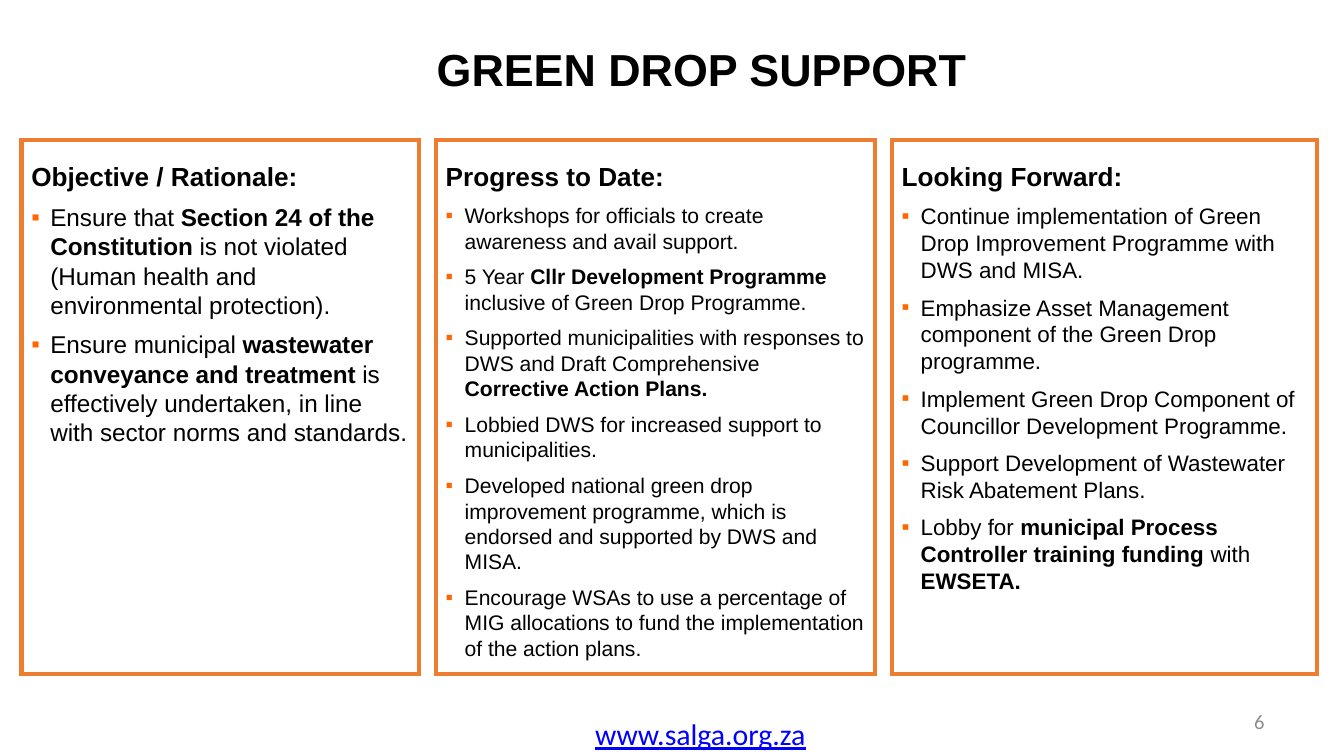
"""Build the Green Drop support slide with three outlined columns."""
from lxml import etree
from pptx import Presentation
from pptx.dml.color import RGBColor
from pptx.enum import shapes, text
from pptx.oxml import ns
from pptx.util import Pt


def paint(item, tone):
    item.solid()
    item.fore_color.rgb = RGBColor.from_string(tone)


def style(par, face, size, tone, align):
    par.alignment = align
    par.font.name = face
    par.font.size = Pt(size)
    paint(par.font.fill, tone)


left, mid, right = text.PP_ALIGN.LEFT, text.PP_ALIGN.CENTER, text.PP_ALIGN.RIGHT

deck = Presentation()
deck.slide_width, deck.slide_height = Pt(720), Pt(405)
slide = deck.slides.add_slide(deck.slide_layouts[5])

title = slide.shapes.title
title.left, title.top, title.width, title.height = Pt(118), Pt(15), Pt(515.5), Pt(43)
title.text_frame.text = "GREEN DROP SUPPORT"
title.text_frame.vertical_anchor = text.MSO_ANCHOR.MIDDLE
head = title.text_frame.paragraphs[0]
style(head, "Arial", 24, "000000", mid)
head.font.bold = True

columns = [
    (11.5, 213, 13, "Objective / Rationale:", [
        "Ensure that *Section 24 of the Constitution* is not violated "
        "(Human health and environmental protection).",
        "Ensure municipal *wastewater conveyance and treatment *is effectively "
        "undertaken, in line with sector norms and standards.",
    ]),
    (233.5, 235.5, 11.3, "Progress to Date:", [
        "Workshops for officials to create awareness and avail support.",
        "5 Year *Cllr Development Programme *inclusive of Green Drop Programme.",
        "Supported municipalities with responses to DWS and Draft Comprehensive "
        "*Corrective Action Plans.",
        "Lobbied DWS for increased support to municipalities.",
        "Developed national green drop improvement programme, which is endorsed "
        "and supported by DWS and MISA.",
        "Encourage WSAs to use a percentage of MIG allocations to fund the "
        "implementation of the action plans.",
    ]),
    (477.7, 228, 12, "Looking Forward:", [
        "Continue implementation of Green Drop Improvement Programme with DWS and MISA.",
        "Emphasize Asset Management component of the Green Drop programme.",
        "Implement Green Drop Component of Councillor Development Programme.",
        "Support Development of Wastewater Risk Abatement Plans.",
        "Lobby for *municipal Process Controller training funding* with *EWSETA.",
    ]),
]

for x, wide, size, name, points in columns:
    box = slide.shapes.add_shape(
        shapes.MSO_SHAPE.RECTANGLE, Pt(x), Pt(75), Pt(wide), Pt(286))
    box.shadow.inherit = False
    box.fill.background()
    paint(box.line.fill, "ED7D31")
    box.line.width = Pt(2.25)
    edge = box._element.spPr.find(ns.qn("a:ln"))
    etree.SubElement(edge, ns.qn("a:miter"), lim="800000")
    frame = box.text_frame
    frame.word_wrap = True
    frame.vertical_anchor = text.MSO_ANCHOR.TOP
    frame.margin_left = frame.margin_right = Pt(5.3)
    frame.margin_top = frame.margin_bottom = Pt(2.7)

    head = frame.paragraphs[0]
    head.text = name
    head.line_spacing = 1.5
    style(head, "Arial", 14, "000000", left)
    head.font.bold = True

    for point in points:
        par = frame.add_paragraph()
        props = par._p.get_or_add_pPr()
        props.set("marL", str(Pt(10.2)))
        props.set("indent", str(-Pt(10.2)))
        tint = etree.SubElement(props, ns.qn("a:buClr"))
        etree.SubElement(tint, ns.qn("a:srgbClr"), val="FF6600")
        etree.SubElement(props, ns.qn("a:buFont"), typeface="Arial")
        etree.SubElement(props, ns.qn("a:buChar"), char="▪")
        par.space_before = Pt(5.6)
        par.line_spacing = 1.0
        style(par, "Arial", size, "000000", left)
        for i, part in enumerate(point.split("*")):
            run = par.add_run()
            run.text = part
            run.font.bold = i % 2 == 1

notes = [
    ("www.salga.org.za", 294, 380, 162.5, 26, 16, "0000FF", mid, True),
    ("6", 516.5, 375.5, 168, 21.5, 11, "8C8C8C", right, False),
]
for words, x, y, wide, high, size, tone, align, under in notes:
    box = slide.shapes.add_textbox(Pt(x), Pt(y), Pt(wide), Pt(high))
    frame = box.text_frame
    frame.word_wrap = True
    frame.vertical_anchor = text.MSO_ANCHOR.TOP if under else text.MSO_ANCHOR.MIDDLE
    frame.text = words
    par = frame.paragraphs[0]
    style(par, "Calibri", size, tone, align)
    par.font.underline = under

deck.save("out.pptx")
